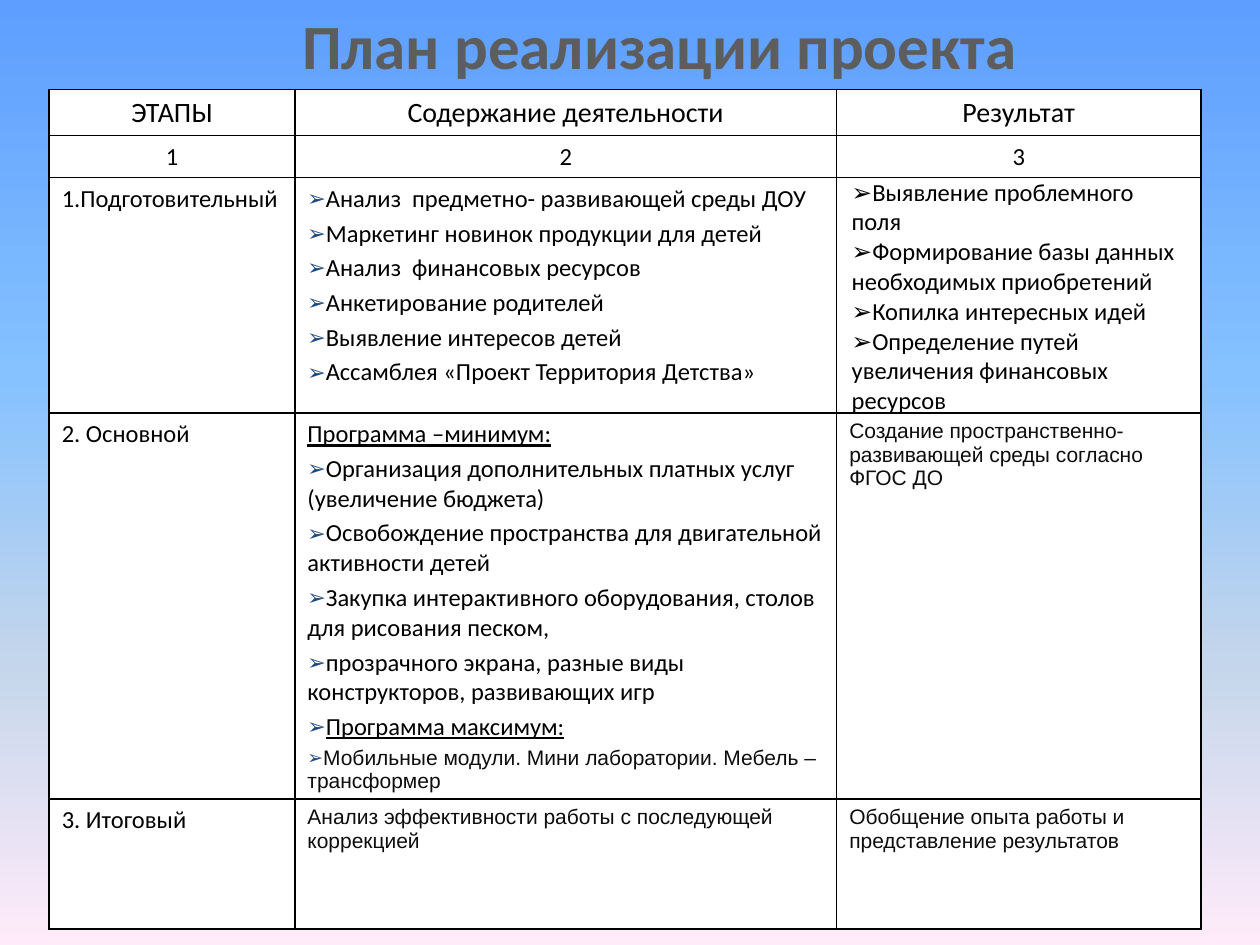
import lxml.etree
import pptx
import pptx.dml.color
import pptx.enum.text
import pptx.oxml.ns
import pptx.util

Inches = pptx.util.Inches
Pt = pptx.util.Pt
RGB = pptx.dml.color.RGBColor.from_string
ALIGN = pptx.enum.text.PP_ALIGN

THEME = {
    "sky": [(0, "5E9EFF"), (40, "85C2FF"), (70, "C4D6EB"), (100, "FFEBFA")],
    "title_fill": [(0, "555555"), (49, "5D5D5D"), (50, "000000"), (95, "000000"), (100, "000000")],
    "title": {"name": "Calibri", "size": Pt(36), "bold": True},
    "head": {"name": "Calibri", "size": Pt(16), "underline": False},
    "body": {"name": "Calibri", "size": Pt(14), "underline": False},
    "program": {"name": "Calibri", "size": Pt(14), "underline": True},
    "note": {"name": "Arial", "size": Pt(12), "underline": False},
    "ink": {"head": "000000", "body": "000000", "program": "000000", "note": "0D0D0D"},
    "paper": "FFFFFF",
    "border": "000000",
    "bullet": "1F497D",
}


def child(parent, tag, **attributes):
    values = {key: str(value) for key, value in attributes.items()}
    return lxml.etree.SubElement(parent, pptx.oxml.ns.qn("a:" + tag), values)


def use_gradient(element, stops):
    solid = element.xpath(".//a:solidFill")[0]
    holder = solid.getparent()
    gradient = child(holder, "gradFill", rotWithShape=1)
    stop_list = child(gradient, "gsLst")
    for position, color in stops:
        child(child(stop_list, "gs", pos=position * 1000), "srgbClr", val=color)
    child(gradient, "lin", ang=5400000, scaled=0)
    holder.replace(solid, gradient)


deck = pptx.Presentation()
deck.slide_width, deck.slide_height = Inches(10), Inches(7.5)
slide = deck.slides.add_slide(deck.slide_layouts[6])
slide.background.fill.solid()
use_gradient(slide.element, THEME["sky"])

title = slide.shapes.add_textbox(Inches(1.25), Inches(0), Inches(7.97), Inches(0.71))
title.text_frame.word_wrap = True
title.text_frame.auto_size = pptx.enum.text.MSO_AUTO_SIZE.SHAPE_TO_FIT_TEXT
heading = title.text_frame.paragraphs[0]
heading.alignment = ALIGN.CENTER
heading_run = heading.add_run()
heading_run.text = "План реализации проекта"
for name, value in THEME["title"].items():
    setattr(heading_run.font, name, value)
heading_run.font.fill.solid()
use_gradient(title.element, THEME["title_fill"])
properties = title.element.xpath(".//a:rPr")[0]
outline = child(properties, "ln", w=Pt(1.4))
child(child(outline, "solidFill"), "srgbClr", val=THEME["paper"])
properties.insert(0, outline)

# style, bullet kind, paragraphs
plan = [
    [[("head", "", "ЭТАПЫ")], [("head", "", "Содержание деятельности")], [("head", "", "Результат")]],
    [[("body", "", "1")], [("body", "", "2")], [("body", "", "3")]],
    [
        [("body", "", "1.Подготовительный")],
        [("body", "blue", text) for text in (
            "Анализ  предметно- развивающей среды ДОУ",
            "Маркетинг новинок продукции для детей",
            "Анализ  финансовых ресурсов",
            "Анкетирование родителей",
            "Выявление интересов детей",
            "Ассамблея «Проект Территория Детства»",
        )],
        [("body", "plain", text) for text in (
            "Выявление проблемного поля",
            "Формирование базы данных необходимых приобретений",
            "Копилка интересных идей",
            "Определение путей увеличения финансовых ресурсов",
        )],
    ],
    [
        [("body", "", "2. Основной")],
        [
            ("program", "", "Программа –минимум:"),
            ("body", "blue", "Организация дополнительных платных услуг (увеличение бюджета)"),
            ("body", "blue", "Освобождение пространства для двигательной активности детей"),
            ("body", "blue", "Закупка интерактивного оборудования, столов для рисования песком,"),
            ("body", "blue", "прозрачного экрана, разные виды конструкторов, развивающих игр"),
            ("program", "blue", "Программа максимум:"),
            ("note", "blue", "Мобильные модули. Мини лаборатории. Мебель – трансформер"),
        ],
        [("note", "", "Создание пространственно-развивающей среды согласно ФГОС ДО")],
    ],
    [
        [("body", "", "3. Итоговый")],
        [("note", "", "Анализ эффективности работы с последующей коррекцией")],
        [("note", "", "Обобщение опыта работы и представление результатов")],
    ],
]
column_widths = [1.95, 4.3, 2.89]
row_heights = [0.35, 0.32, 1.77, 2.94, 1.03]

stages = slide.shapes.add_table(
    len(row_heights), len(column_widths), Inches(0.39), Inches(0.71),
    Inches(sum(column_widths)), Inches(sum(row_heights))).table
stages.first_row = stages.horz_banding = False
for column, width in zip(stages.columns, column_widths):
    column.width = Inches(width)
for row, height in zip(stages.rows, row_heights):
    row.height = Inches(height)

for row_index, plan_row in enumerate(plan):
    for column_index, entries in enumerate(plan_row):
        cell = stages.cell(row_index, column_index)
        tight = entries[0][1] == "plain"
        cell.margin_left = cell.margin_right = Inches(0.12 if tight else 0.1)
        cell.margin_top = cell.margin_bottom = Inches(0 if tight else 0.05)
        cell.fill.solid()
        cell.fill.fore_color.rgb = RGB(THEME["paper"])
        cell_properties = cell.fill._xPr
        for order, side in enumerate(("lnL", "lnR", "lnT", "lnB")):
            line = child(cell_properties, side, w=Pt(1))
            child(child(line, "solidFill"), "srgbClr", val=THEME["border"])
            cell_properties.insert(order, line)

        for index, (style, bullet, text) in enumerate(entries):
            frame = cell.text_frame
            paragraph = frame.add_paragraph() if index else frame.paragraphs[0]
            paragraph.alignment = ALIGN.CENTER if row_index < 2 else ALIGN.LEFT
            layout = paragraph._p.get_or_add_pPr()
            if not tight:
                child(child(layout, "spcBef"), "spcPct", val=20000)
            if bullet == "blue":
                child(child(layout, "buClr"), "srgbClr", val=THEME["bullet"])
                child(layout, "buSzPct", val=90000)
            if bullet:
                child(layout, "buFont", typeface="Arial")
                child(layout, "buChar", char="➢")
            run = paragraph.add_run()
            run.text = text
            for name, value in THEME[style].items():
                setattr(run.font, name, value)
            run.font.color.rgb = RGB(THEME["ink"][style])

deck.save("out.pptx")
